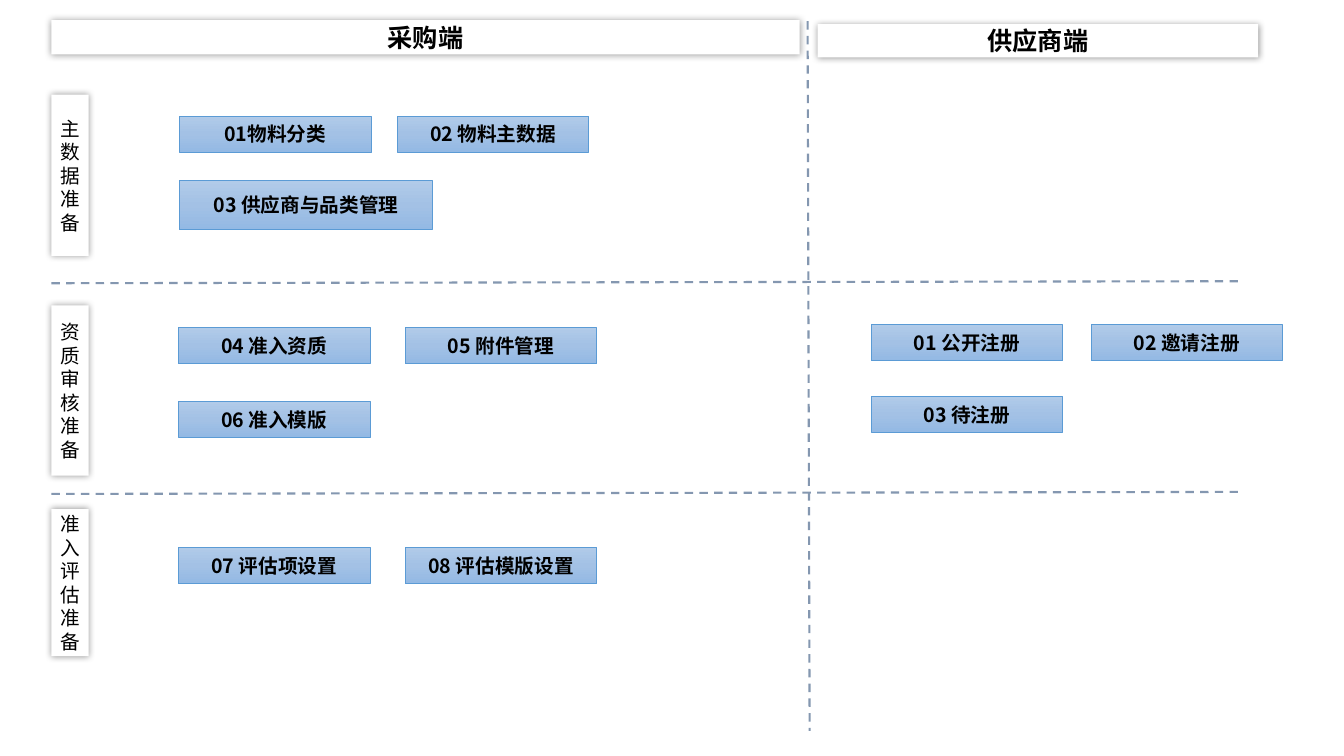
from copy import deepcopy

from lxml import etree
from pptx import Presentation
from pptx import util as u
from pptx.dml.color import RGBColor
from pptx.enum import dml, shapes, text
from pptx.oxml.ns import qn

BLACK = RGBColor(0x00, 0x00, 0x00)
WHITE = RGBColor(0xFF, 0xFF, 0xFF)
DIVIDER = RGBColor(0x84, 0x97, 0xB0)
STEP_LINE = RGBColor(0x5B, 0x9B, 0xD5)
STEP_STOPS = [
    (0, RGBColor(0xB1, 0xCB, 0xE9)),
    (0.5, RGBColor(0xA3, 0xC1, 0xE5)),
    (1, RGBColor(0x93, 0xB9, 0xE4)),
]
FONT = "Noto Sans CJK SC"
EMU_PER_PX = 9144  # 100 px to the inch
STEP_W, STEP_H = 190, 36

ENDS = [  # left, top, width, height, name
    (51, 20, 742, 34, "采购端"),
    (811, 24, 437, 33, "供应商端"),
]
STAGES = [  # top, height, name
    (94, 160, "主数据\n准备"),
    (303, 169, "资质审核准备"),
    (505, 146, "准入评估准备"),
]
DIVIDERS = [(801, 21, 803, 725), (51, 281, 1232, 279), (51, 490, 1231, 488)]
STEP_ROWS = [  # top, then left and name of each step
    (115, [(178, "01物料分类"), (394, "02 物料主数据")]),
    (325, [(177, "04 准入资质"), (402, "05 附件管理")]),
    (398, [(177, "06 准入模版")]),
    (322, [(864, "01 公开注册"), (1082, "02 邀请注册")]),
    (393, [(864, "03 待注册")]),
    (543, [(177, "07 评估项设置"), (402, "08 评估模版设置")]),
]


def px(*lengths):
    return [u.Emu(length * EMU_PER_PX) for length in lengths]


def write(shape, words, size=14, bold=False, color=BLACK, spacing=None, margin=5):
    """Fill a shape with centred text, one paragraph a line."""
    frame = shape.text_frame
    frame.word_wrap = True
    frame.vertical_anchor = text.MSO_ANCHOR.MIDDLE
    frame.margin_left, frame.margin_right = px(margin, margin)
    frame.margin_top, frame.margin_bottom = px(0, 0)
    frame.text = words
    for paragraph in frame.paragraphs:
        paragraph.alignment = text.PP_ALIGN.CENTER
        paragraph.line_spacing = spacing
        for run in paragraph.runs:
            font = run.font
            font.size, font.bold, font.name = u.Pt(size), bold, FONT
            font.color.rgb = color
            etree.SubElement(run._r.get_or_add_rPr(), qn("a:ea"), typeface=FONT)


class ProcessMap:
    def __init__(self, slide):
        self.shapes = slide.shapes

    def rect(self, *box):
        shape = self.shapes.add_shape(shapes.MSO_SHAPE.RECTANGLE, *px(*box))
        shape.shadow.inherit = False
        return shape

    def card(self, *box):
        """A white borderless rectangle with a soft shadow all round."""
        card = self.rect(*box)
        card.fill.solid()
        card.fill.fore_color.rgb = WHITE
        card.line.fill.background()
        effects = card._element.spPr.find(qn("a:effectLst"))
        glow = etree.SubElement(effects, qn("a:outerShdw"), blurRad=str(u.Pt(5)),
                                dist="0", dir="0", algn="ctr", rotWithShape="0")
        black = etree.SubElement(glow, qn("a:srgbClr"), val=str(BLACK))
        etree.SubElement(black, qn("a:alpha"), val="40000")
        return card

    def end(self, left, top, width, height, name):
        write(self.card(left, top, width, height), name, size=18, bold=True)

    def stage(self, top, height, name):
        write(self.card(51, top, 37, height), name, spacing=u.Pt(16.8))

    def step(self, left, top, name, width=STEP_W, height=STEP_H):
        step = self.rect(left, top, width, height)
        step.fill.gradient()
        step.fill.gradient_angle = 270
        stops = step._element.spPr.find(".//" + qn("a:gsLst"))
        stops.append(deepcopy(stops[0]))
        for stop, (position, color) in zip(step.fill.gradient_stops, STEP_STOPS):
            stop.position = position
            stop.color.rgb = color
        step.line.color.rgb = STEP_LINE
        step.line.width = u.Pt(0.5)
        write(step, name, bold=True)

    def divider(self, *ends):
        divider = self.shapes.add_connector(shapes.MSO_CONNECTOR.STRAIGHT, *px(*ends))
        divider.line.color.rgb = DIVIDER
        divider.line.width = u.Pt(1.5)
        divider.line.dash_style = dml.MSO_LINE.DASH
        etree.SubElement(divider._element.spPr, qn("a:effectLst"))


def main():
    deck = Presentation()
    deck.slide_width, deck.slide_height = px(1333, 750)
    blank = deck.slide_layouts[6]
    process = ProcessMap(deck.slides.add_slide(blank))
    for divider in DIVIDERS:
        process.divider(*divider)
    for end in ENDS:
        process.end(*end)
    for stage in STAGES:
        process.stage(*stage)
    for top, steps in STEP_ROWS:
        for left, name in steps:
            process.step(left, top, name)
    process.step(178, 179, "03 供应商与品类管理", width=251, height=49)
    deck.save("out.pptx")


if __name__ == "__main__":
    main()
